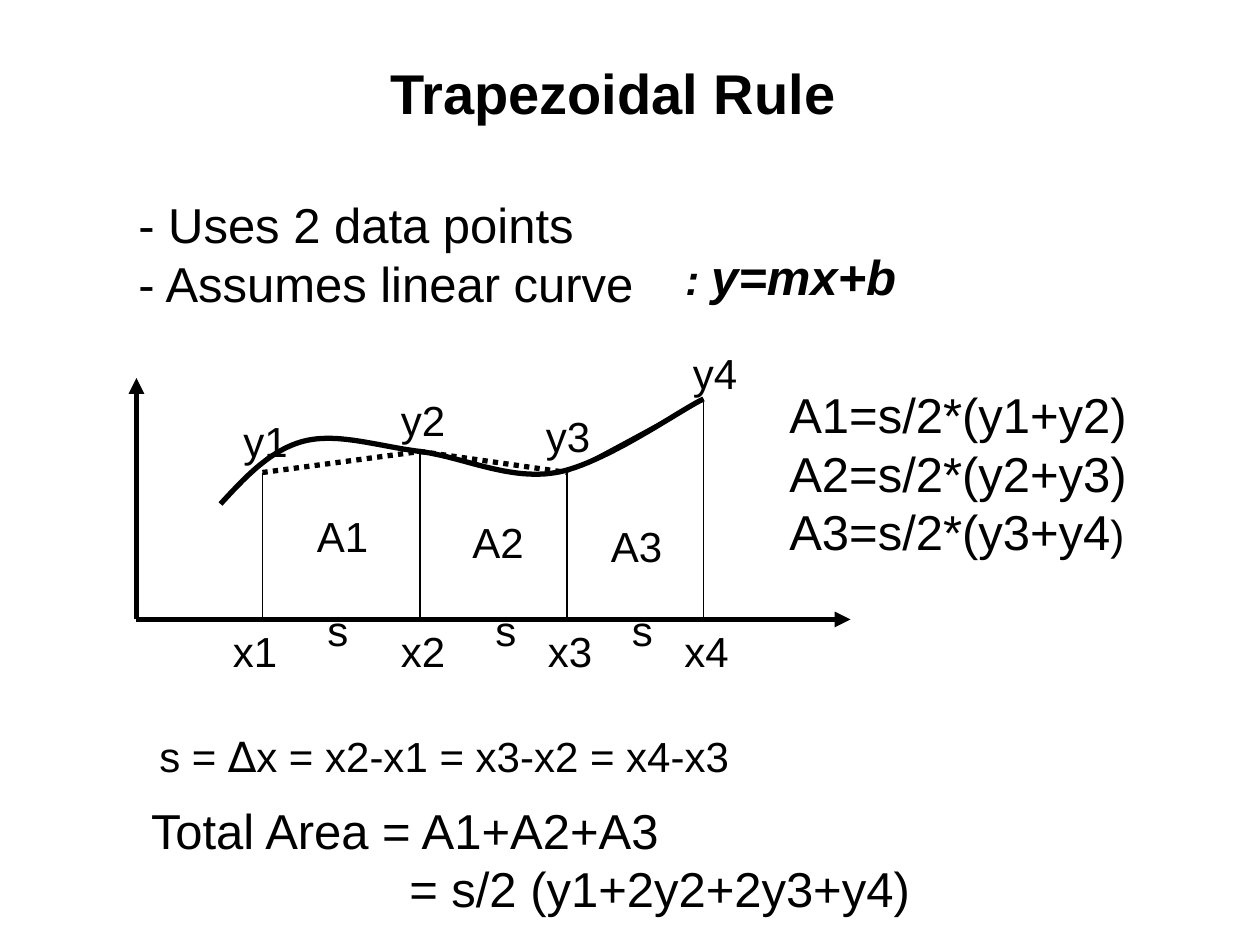
from dataclasses import dataclass

from lxml import etree
from pptx import Presentation
from pptx.dml.color import RGBColor
from pptx.enum.dml import MSO_LINE
from pptx.enum.shapes import MSO_CONNECTOR
from pptx.enum.text import MSO_ANCHOR, PP_ALIGN
from pptx.oxml.ns import qn
from pptx.util import Inches, Pt

STRAIGHT = MSO_CONNECTOR.STRAIGHT
DOTTED = MSO_LINE.ROUND_DOT
LEFT = PP_ALIGN.LEFT
TOP = MSO_ANCHOR.TOP

SLIDE_WIDTH, SLIDE_HEIGHT = 10, 7.5
COLUMNS = 120  # square grid cells, twelve to the inch
BLACK = "000000"
THICK, THIN = 3, 0.75
BASELINE, AXIS_LEFT, AXIS_RIGHT, AXIS_TOP = 59, 13, 81, 36

Point = tuple[float, float]


@dataclass
class Run:
    text: str
    size: float = 28
    bold: bool = False
    italic: bool = False
    name: str = "Arial"


@dataclass
class TextBlock:
    column: float
    row: float
    width: float
    height: float
    paragraphs: list[list[Run]]
    indents: tuple[float, ...] = ()
    wrap: bool = False


def grid(cells: float) -> int:
    """Length of a number of grid cells."""
    return Inches(cells * SLIDE_WIDTH / COLUMNS)


def color(value: str) -> RGBColor:
    return RGBColor.from_string(value)


def label(text: str, column: float, row: float, width: float) -> TextBlock:
    return TextBlock(column, row, width, 6, [[Run(text, 24)]])


def add_text(slide, block: TextBlock) -> None:
    box = slide.shapes.add_textbox(
        *map(grid, (block.column, block.row, block.width, block.height)))
    frame = box.text_frame
    frame.word_wrap, frame.vertical_anchor = block.wrap, TOP
    for index, runs in enumerate(block.paragraphs):
        paragraph = frame.add_paragraph() if index else frame.paragraphs[0]
        paragraph.alignment = LEFT
        if index < len(block.indents):
            properties = paragraph._p.get_or_add_pPr()
            properties.set("marL", str(grid(block.indents[index])))
            properties.set("indent", "0")
        for item in runs:
            run = paragraph.add_run()
            run.text = item.text
            formats = {"name": item.name, "size": Pt(item.size),
                       "bold": item.bold, "italic": item.italic}
            for attribute, value in formats.items():
                setattr(run.font, attribute, value)
            run.font.color.rgb = color(BLACK)


def add_line(slide, start: Point, end: Point, weight: float,
             dash=None, arrow: bool = False) -> None:
    connector = slide.shapes.add_connector(
        STRAIGHT, *map(grid, (*start, *end)))
    connector.line.color.rgb = color(BLACK)
    connector.line.width = Pt(weight)
    if dash is not None:
        connector.line.dash_style = dash
    if arrow:
        etree.SubElement(connector.line._get_or_add_ln(), qn("a:tailEnd"),
                         type="triangle")
    etree.SubElement(connector._element.spPr, qn("a:effectLst"))


def bezier(points: tuple[Point, ...], share: float) -> Point:
    """Point at a share of the way along a cubic Bézier segment."""
    rest = 1 - share
    weights = (rest ** 3, 3 * rest ** 2 * share,
               3 * rest * share ** 2, share ** 3)
    x, y = (sum(w * v for w, v in zip(weights, axis)) for axis in zip(*points))
    return x, y


def add_curve(slide, controls: list[Point], steps: int = 24) -> None:
    vertices = [bezier(tuple(controls[first:first + 4]), step / steps)
                for first in range(0, len(controls) - 1, 3)
                for step in range(1, steps + 1)]
    builder = slide.shapes.build_freeform(
        *map(grid, controls[0]), scale=1.0)
    builder.add_line_segments(
        [(grid(x), grid(y)) for x, y in vertices], close=False)
    curve = builder.convert_to_shape()
    curve.shadow.inherit = False
    curve.fill.background()
    curve.line.color.rgb = color(BLACK)
    curve.line.width = Pt(THICK)


CURVE = [(21, 48), (23.4, 45.4), (25.8, 42.8), (29, 42),
         (32.2, 41.2), (36, 42.5), (40, 43),
         (44, 43.5), (48.5, 45.8), (53, 45),
         (57.5, 44.2), (64.7, 39.1), (67, 38)]
SAMPLES = [(25, 45), (40, 43), (54, 45), (67, 38)]
CHORD_STYLES = [(THICK, DOTTED), (THICK, DOTTED), (THIN, None)]

LABELS = [
    *(label(f"x{n}", column, BASELINE, 6.6)
      for n, column in enumerate((21, 37, 51, 64), 1)),
    *(label("s", column, 57, 4.4) for column in (30, 46, 59)),
    *(label(f"y{n}", column, row, 6.6) for n, (column, row) in enumerate(
        ((22, 39), (37, 37), (50.8, 38.5), (64.8, 32.5)), 1)),
    *(label(f"A{n}", column, row, 7.3) for n, (column, row) in enumerate(
        ((29, 48), (43.8, 48.6), (57, 49)), 1)),
]

TEXTS = [
    TextBlock(36, 5, 64, 7.6, [[Run("Trapezoidal Rule", 32, bold=True)]],
              wrap=True),
    TextBlock(6.8, 17.9, 62.9, 12.4,
              [[Run("- Uses 2 data points")], [Run("- Assumes linear curve")]],
              indents=(5.2, 5.2)),
    TextBlock(64.1, 22.9, 22.6, 6.8,
              [[Run(": ", 24, True, True), Run("y=mx+b", 28, True, True)]]),
    TextBlock(74, 36, 34.9, 18.1,
              [[Run("A1=s/2*(y1+y2)")], [Run("A2=s/2*(y2+y3)")],
               [Run("A3=s/2*(y3+y4"), Run(")", 24)]]),
    TextBlock(14, 69, 57.4, 6,
              [[Run("s = ", 24), Run("∆", 24, name="Lato"),
                Run("x = x2-x1 = x3-x2 = x4-x3", 24)]]),
    TextBlock(13.2, 75.6, 74.8, 12.4,
              [[Run("Total Area = A1+A2+A3")],
               [Run("= s/2 (y1+2y2+2y3+y4)")]],
              indents=(0, 24.6)),
]


def main() -> None:
    presentation = Presentation()
    presentation.slide_width = Inches(SLIDE_WIDTH)
    presentation.slide_height = Inches(SLIDE_HEIGHT)
    slide = presentation.slides.add_slide(presentation.slide_layouts[6])

    origin = (AXIS_LEFT, BASELINE)
    for end in ((AXIS_RIGHT, BASELINE), (AXIS_LEFT, AXIS_TOP)):
        add_line(slide, origin, end, THICK, arrow=True)
    add_curve(slide, CURVE)
    for x, y in SAMPLES:
        add_line(slide, (x, y), (x, BASELINE), THIN)
    for start, end, (weight, dash) in zip(SAMPLES, SAMPLES[1:], CHORD_STYLES):
        add_line(slide, start, end, weight, dash)
    for block in LABELS + TEXTS:
        add_text(slide, block)

    presentation.save("out.pptx")


if __name__ == "__main__":
    main()
